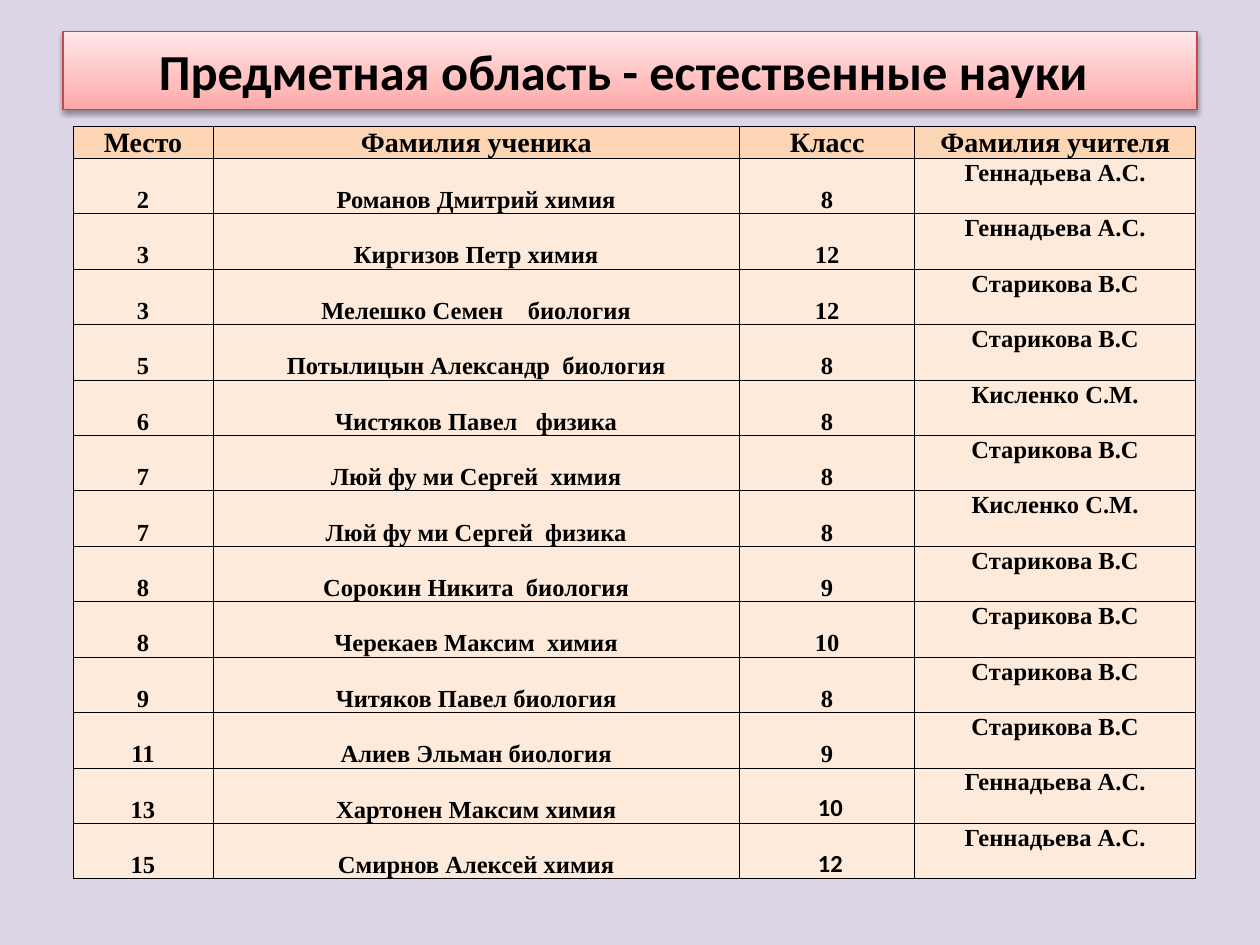
from lxml import etree
from pptx import Presentation
from pptx import util as u
from pptx.dml.color import RGBColor
from pptx.enum import shapes, text
from pptx.oxml import parse_xml
from pptx.oxml.ns import nsdecls, qn

COLORS = {
    "page": "DDD6E7",
    "ink": "000000",
    "title_line": "BF4C48",
    "header": "FCD5B5",
    "body": "FDEADA",
}
TITLE_STOPS = [(0, "FFA6A5"), (35, "FFC0BF"), (100, "FFE7E7")]
HEADINGS = ["Место", "Фамилия ученика", "Класс", "Фамилия учителя"]
RESULTS = [
    ("2", "Романов Дмитрий химия", "8", "Геннадьева А.С."),
    ("3", "Киргизов Петр химия", "12", "Геннадьева А.С."),
    ("3", "Мелешко Семен    биология", "12", "Старикова В.С"),
    ("5", "Потылицын Александр  биология", "8", "Старикова В.С"),
    ("6", "Чистяков Павел   физика", "8", "Кисленко С.М."),
    ("7", "Люй фу ми Сергей  химия", "8", "Старикова В.С"),
    ("7", "Люй фу ми Сергей  физика", "8", "Кисленко С.М."),
    ("8", "Сорокин Никита  биология", "9", "Старикова В.С"),
    ("8", "Черекаев Максим  химия", "10", "Старикова В.С"),
    ("9", "Читяков Павел биология", "8", "Старикова В.С"),
    ("11", "Алиев Эльман биология", "9", "Старикова В.С"),
    ("13", "Хартонен Максим химия", "10", "Геннадьева А.С."),
    ("15", "Смирнов Алексей химия", "12", "Геннадьева А.С."),
]
COLUMN_WIDTHS = [1.11, 4.18, 1.39, 2.23]
HEADER_HEIGHT = 0.25
ROW_HEIGHT = 0.44
CLASS_COLUMN = 2
TEACHER_COLUMN = 3
CALIBRI_ROWS = (12, 13)


def rgb(name):
    return RGBColor.from_string(COLORS[name])


class SlideBuilder:
    heading_font = "Calibri"
    table_font = "Times New Roman"

    def __init__(self, page):
        self.page = page

    def background(self, color):
        fill = self.page.background.fill
        fill.solid()
        fill.fore_color.rgb = rgb(color)

    def label(self, frame, content, font, size):
        frame.text = content
        for para in frame.paragraphs:
            para.alignment = text.PP_ALIGN.CENTER
            for span in para.runs:
                span.font.name = font
                span.font.size = u.Pt(size)
                span.font.bold = True
                span.font.color.rgb = rgb("ink")

    def title(self, content, left, top, width, height):
        box = self.page.shapes.add_shape(
            shapes.MSO_SHAPE.RECTANGLE,
            *(u.Inches(value) for value in (left, top, width, height)),
        )
        stops = "".join(
            f'<a:gs pos="{position * 1000}"><a:srgbClr val="{color}"/></a:gs>'
            for position, color in TITLE_STOPS
        )
        properties = box.element.spPr
        properties.append(parse_xml(
            f'<a:gradFill {nsdecls("a")} rotWithShape="1"><a:gsLst>{stops}</a:gsLst>'
            '<a:lin ang="16200000" scaled="0"/></a:gradFill>'
        ))
        box.line.color.rgb = rgb("title_line")
        box.line.width = u.Pt(0.75)
        properties.append(parse_xml(
            f'<a:effectLst {nsdecls("a")}>'
            '<a:outerShdw blurRad="39370" dist="20320" dir="5400000" rotWithShape="0">'
            f'<a:srgbClr val="{COLORS["ink"]}"><a:alpha val="38000"/></a:srgbClr>'
            '</a:outerShdw></a:effectLst>'
        ))
        frame = box.text_frame
        frame.word_wrap = True
        frame.vertical_anchor = text.MSO_ANCHOR.MIDDLE
        frame.margin_right = u.Inches(0.2)
        self.label(frame, content, self.heading_font, 28.8)

    def border(self, cell):
        properties = cell._tc.get_or_add_tcPr()
        for side in ("lnL", "lnR", "lnT", "lnB"):
            line = etree.SubElement(properties, qn(f"a:{side}"), w=str(u.Pt(0.5)))
            fill = etree.SubElement(line, qn("a:solidFill"))
            etree.SubElement(fill, qn("a:srgbClr"), val=COLORS["ink"])

    def cell(self, cell, content, color, font, size, anchor, indent):
        self.border(cell)
        cell.fill.solid()
        cell.fill.fore_color.rgb = rgb(color)
        cell.margin_left = u.Inches(indent)
        cell.margin_right = cell.margin_top = u.Inches(0.01)
        cell.margin_bottom = 0
        cell.vertical_anchor = anchor
        self.label(cell.text_frame, content, font, size)

    def table(self, rows, left, top):
        heights = [HEADER_HEIGHT] + [ROW_HEIGHT] * (len(rows) - 1)
        table = self.page.shapes.add_table(
            len(rows), len(COLUMN_WIDTHS), u.Inches(left), u.Inches(top),
            u.Inches(sum(COLUMN_WIDTHS)), u.Inches(sum(heights)),
        ).table
        for column, width in zip(table.columns, COLUMN_WIDTHS):
            column.width = u.Inches(width)
        for index, (row, values) in enumerate(zip(table.rows, rows)):
            row.height = u.Inches(heights[index])
            for column, value in enumerate(values):
                header = index == 0
                teacher = column == TEACHER_COLUMN and not header
                calibri = column == CLASS_COLUMN and index in CALIBRI_ROWS
                self.cell(
                    table.cell(index, column), value,
                    color="header" if header else "body",
                    font=self.heading_font if calibri else self.table_font,
                    size=16 if header else 14,
                    anchor=text.MSO_ANCHOR.TOP if teacher else text.MSO_ANCHOR.BOTTOM,
                    indent=0.06 if calibri else 0.01,
                )


def main():
    deck = Presentation()
    deck.slide_width = u.Inches(10)
    deck.slide_height = u.Inches(7.5)
    builder = SlideBuilder(deck.slides.add_slide(deck.slide_layouts[6]))
    builder.background("page")
    builder.title("Предметная область - естественные науки", 0.5, 0.25, 9, 0.62)
    builder.table([HEADINGS, *RESULTS], 0.58, 1)
    deck.save("out.pptx")


if __name__ == "__main__":
    main()
